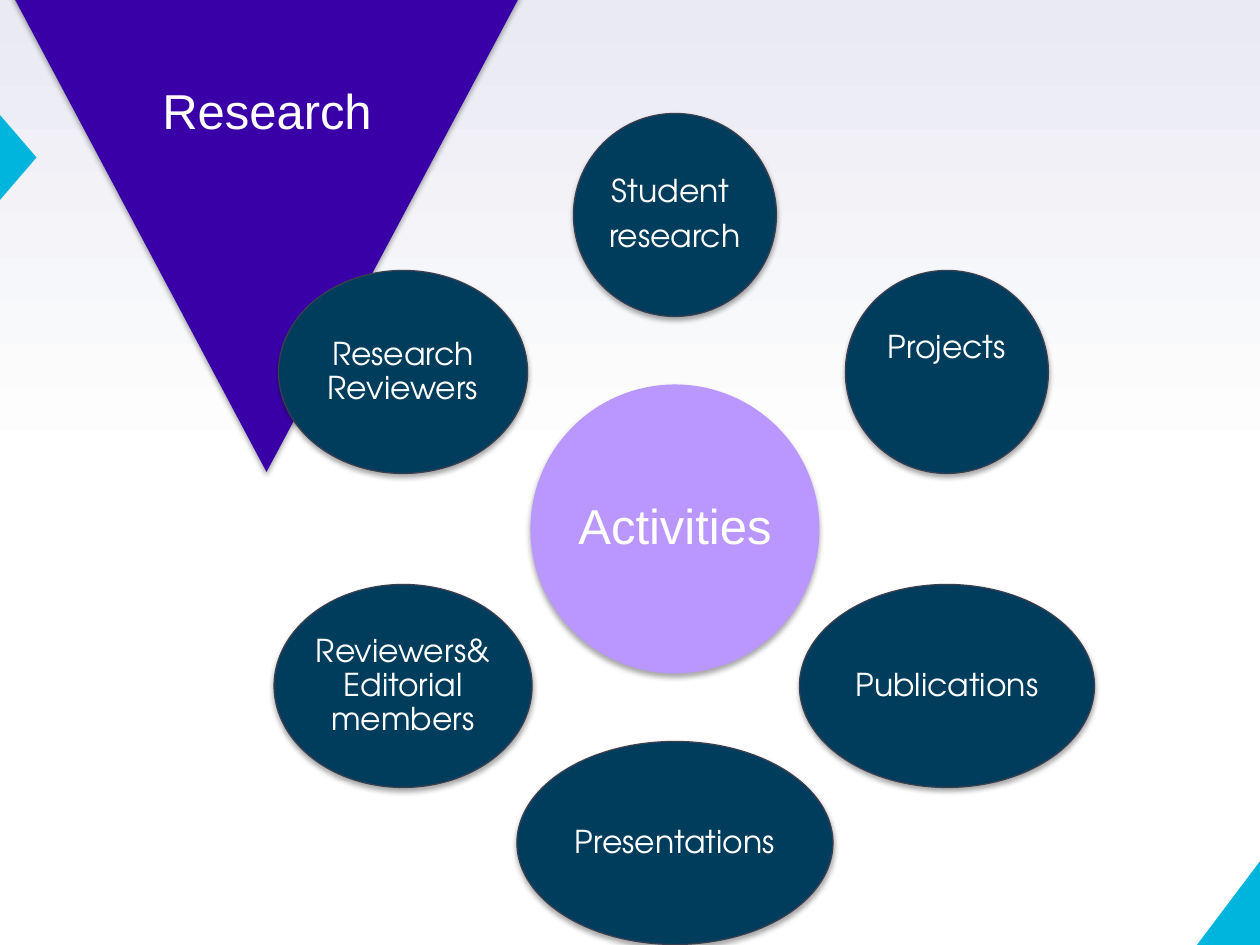
import math
import pptx
import pptx.util
import pptx.dml.color
import pptx.enum.shapes
import pptx.enum.text
import pptx.oxml
import pptx.oxml.ns

# Content: lines, oval width, upward shift of the text; clockwise from the top
RING = [
    (["Student ", "research"], 203, 0),
    (["Projects"], 203, 24),
    (["Publications"], 295, 0),
    (["Presentations"], 316, 0),
    (["Reviewers& Editorial members"], 258, 0),
    (["Research Reviewers"], 249, 0),
]
TITLE, HUB = "Research", "Activities"

MID_X, MID_Y, RADIUS = 675, 529, 314
HUB_SIZE, OVAL_H = 289, 203
CYAN, PURPLE, LILAC, NAVY, EDGE = "00B5DD", "3900A8", "BA96FF", "003D5C", "3A3F50"
SANS, ROUND = "Arial", "TeX Gyre Adventor"
SHAPE = pptx.enum.shapes.MSO_SHAPE


def px(n):
    return pptx.util.Emu(round(n * 914400 / 126))


def rgb(code):
    return pptx.dml.color.RGBColor.from_string(code)


def draw(kind, box, fill, edge=None, soft=True):
    shape = slide.shapes.add_shape(kind, *map(px, box))
    shape.fill.solid()
    shape.fill.fore_color.rgb = rgb(fill)
    if edge:
        shape.line.color.rgb = rgb(edge)
        shape.line.width = pptx.util.Pt(0.75)
    else:
        shape.line.fill.background()
    shape.shadow.inherit = False
    if soft:
        effects = shape._element.spPr.find(pptx.oxml.ns.qn("a:effectLst"))
        effects.append(pptx.oxml.parse_xml(
            f'<a:outerShdw {pptx.oxml.ns.nsdecls("a")} blurRad="40000" dist="23000" '
            'dir="5400000" rotWithShape="0"><a:srgbClr val="000000">'
            '<a:alpha val="35000"/></a:srgbClr></a:outerShdw>'))
    return shape


def write(shape, lines, font, size, inset, lift=0):
    frame = shape.text_frame
    frame.word_wrap = True
    frame.vertical_anchor = pptx.enum.text.MSO_ANCHOR.MIDDLE
    frame.margin_left = frame.margin_right = frame.margin_top = px(inset)
    frame.margin_bottom = px(inset + 2 * lift)
    frame.text = "\n".join(lines)
    for para in frame.paragraphs:
        para.alignment = pptx.enum.text.PP_ALIGN.CENTER
        para.line_spacing = 0.9
        para.space_after = pptx.util.Pt(size * 0.35)
        para.font.name = font
        para.font.size = pptx.util.Pt(size)
        para.font.color.rgb = rgb("FFFFFF")


def around(x, y, w, h):
    return x - w / 2, y - h / 2, w, h


deck = pptx.Presentation()
deck.slide_width, deck.slide_height = px(1260), px(945)
slide = deck.slides.add_slide(deck.slide_layouts[6])

# Background: white below, fading to pale lavender at the top
back = slide.background.fill
back.gradient()
back.gradient_angle = 90
for stop, (place, code) in zip(back.gradient_stops, [(0.5, "FFFFFF"), (1, "E9EAF2")]):
    stop.position = place
    stop.color.rgb = rgb(code)

# Cyan accents at the edges
corner = draw(SHAPE.RIGHT_TRIANGLE, (1197, 860, 64, 85), CYAN, soft=False)
corner._element.spPr.xfrm.set("flipH", "1")
draw(SHAPE.ISOSCELES_TRIANGLE, (-25, 139, 86, 37), CYAN, soft=False).rotation = 90

# Title triangle, pointing down
draw(SHAPE.ISOSCELES_TRIANGLE, (12, -6, 509, 478), PURPLE).rotation = 180
title = slide.shapes.add_textbox(*map(px, (140, -6, 254, 239)))
write(title, [TITLE], SANS, 28, 9)

# Hub and the ring of ovals around it
hub = draw(SHAPE.OVAL, around(MID_X, MID_Y, HUB_SIZE, HUB_SIZE), LILAC)
write(hub, [HUB], SANS, 28, 5)
for i, (lines, width, lift) in enumerate(RING):
    turn = math.tau * i / len(RING)
    x = MID_X + RADIUS * math.sin(turn)
    y = MID_Y - RADIUS * math.cos(turn)
    oval = draw(SHAPE.OVAL, around(x, y, width, OVAL_H), NAVY, EDGE)
    write(oval, lines, ROUND, 18, 4, lift)

deck.save("out.pptx")
